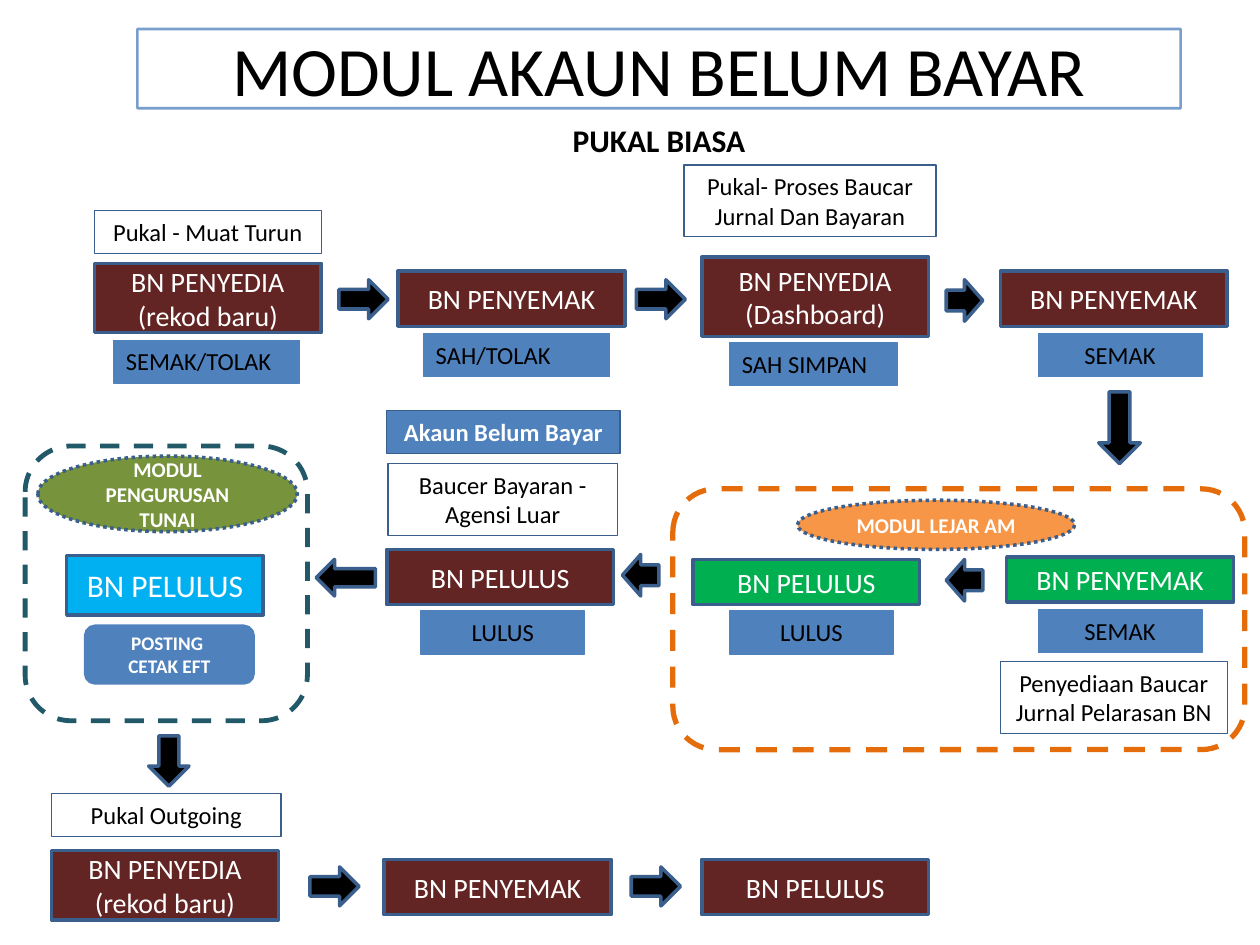
from dataclasses import dataclass
from typing import Optional

from lxml.etree import SubElement
from pptx import Presentation
from pptx.dml.color import RGBColor
from pptx.enum.dml import MSO_LINE as Dash
from pptx.enum.shapes import MSO_SHAPE as Shape
from pptx.enum.text import MSO_ANCHOR as Anchor, MSO_AUTO_SIZE as AutoSize, PP_ALIGN as Align
from pptx.oxml.ns import qn
from pptx.util import Inches, Pt

FONT = "Calibri"
COLORS = {
    "black": "000000",
    "white": "FFFFFF",
    "outline": "3A5F8C",
    "blue": "4F81BD",
    "maroon": "632523",
    "green": "00B050",
    "cyan": "00B0F0",
    "olive": "77933C",
    "orange": "F79646",
    "ledger": "E46C0A",
    "cash": "215968",
}


@dataclass(frozen=True)
class Style:
    fill: Optional[str] = None
    line: str = "outline"
    weight: float = 2
    dash: Optional[Dash] = None
    shape: Shape = Shape.RECTANGLE
    size: float = 16
    color: str = "white"
    bold: bool = False
    align: Align = Align.CENTER
    anchor: Anchor = Anchor.MIDDLE


@dataclass(frozen=True)
class Box:
    style: Style
    left: float
    top: float
    width: float
    height: float
    text: str = ""


@dataclass(frozen=True)
class Arrow:
    left: float
    top: float
    width: float
    height: float
    rotation: int = 0


ROLE = Style("maroon")
LEDGER_ROLE = Style("green")
CASH_ROLE = Style("cyan", size=18)
SCREEN = Style(weight=0.75, size=14, color="black", anchor=Anchor.TOP)
ACTION = Style("blue", "blue", 0.75, size=14, color="black", anchor=Anchor.TOP)
LEFT_ACTION = Style("blue", "blue", 0.75, size=14, color="black",
                    align=Align.LEFT, anchor=Anchor.TOP)
HEADING = Style("blue", weight=0.75, size=14, bold=True, anchor=Anchor.TOP)
POSTING = Style("blue", "blue", shape=Shape.ROUNDED_RECTANGLE, size=11, bold=True)
LEDGER_MODULE = Style("orange", dash=Dash.ROUND_DOT, shape=Shape.OVAL, size=12, bold=True)
CASH_MODULE = Style("olive", dash=Dash.ROUND_DOT, shape=Shape.OVAL, size=12, bold=True)
LEDGER_FRAME = Style(line="ledger", weight=3, dash=Dash.DASH, shape=Shape.ROUNDED_RECTANGLE)
CASH_FRAME = Style(line="cash", weight=2.75, dash=Dash.DASH, shape=Shape.ROUNDED_RECTANGLE)
ARROW = Style("black", shape=Shape.RIGHT_ARROW)

ROLE_W, ROLE_H, TALL_H, LEDGER_H = 1.8, 0.44, 0.55, 0.36
ACTION_W, ONE_LINE, TWO_LINES = 1.3, 0.34, 0.57

BOXES = [
    Box(ROLE, 0.75, 2.09, ROLE_W, TALL_H, "BN PENYEDIA\n(rekod baru)"),
    Box(ROLE, 3.16, 2.15, ROLE_W, ROLE_H, "BN PENYEMAK"),
    Box(ROLE, 5.57, 2.04, ROLE_W, 0.63, "BN PENYEDIA\n(Dashboard)"),
    Box(ROLE, 7.94, 2.15, ROLE_W, ROLE_H, "BN PENYEMAK"),
    Box(ROLE, 3.07, 4.36, ROLE_W, ROLE_H, "BN PELULUS"),
    Box(ROLE, 0.41, 6.75, ROLE_W, TALL_H, "BN PENYEDIA\n(rekod baru)"),
    Box(ROLE, 3.05, 6.82, ROLE_W, ROLE_H, "BN PENYEMAK"),
    Box(ROLE, 5.57, 6.82, ROLE_W, ROLE_H, "BN PELULUS"),
    Box(SCREEN, 0.75, 1.67, ROLE_W, ONE_LINE, "Pukal - Muat Turun"),
    Box(SCREEN, 5.43, 1.31, 2, TWO_LINES, "Pukal- Proses Baucar Jurnal Dan Bayaran"),
    Box(SCREEN, 7.94, 5.25, ROLE_W, TWO_LINES, "Penyediaan Baucar Jurnal Pelarasan BN"),
    Box(SCREEN, 3.08, 3.68, 1.82, TWO_LINES, "Baucer Bayaran - Agensi Luar"),
    Box(SCREEN, 0.41, 6.3, 1.82, ONE_LINE, "Pukal Outgoing"),
    Box(LEDGER_MODULE, 6.33, 3.97, 2.2, 0.39, "MODUL LEJAR AM"),
    Box(CASH_MODULE, 0.3, 3.62, 2.06, 0.6, "MODUL PENGURUSAN TUNAI"),
    Box(CASH_ROLE, 0.53, 4.41, 1.56, 0.47, "BN PELULUS"),
    Box(POSTING, 0.68, 4.97, 1.33, 0.45, "POSTING \nCETAK EFT"),
    Box(LEFT_ACTION, 0.9, 2.7, 1.48, ONE_LINE, "SEMAK/TOLAK"),
    Box(LEFT_ACTION, 3.36, 2.65, 1.48, ONE_LINE, "SAH/TOLAK"),
    Box(LEFT_ACTION, 5.79, 2.72, 1.33, ONE_LINE, "SAH SIMPAN"),
    Box(ACTION, 8.24, 2.65, ACTION_W, ONE_LINE, "SEMAK"),
    Box(LEDGER_ROLE, 7.99, 4.42, ROLE_W, LEDGER_H, "BN PENYEMAK"),
    Box(ACTION, 8.24, 4.84, ACTION_W, ONE_LINE, "SEMAK"),
    Box(LEDGER_ROLE, 5.5, 4.44, ROLE_W, LEDGER_H, "BN PELULUS"),
    Box(ACTION, 5.79, 4.85, ACTION_W, ONE_LINE, "LULUS"),
    Box(ACTION, 3.34, 4.85, ACTION_W, ONE_LINE, "LULUS"),
    Box(LEDGER_FRAME, 5.34, 3.88, 4.54, 2.07),
    Box(CASH_FRAME, 0.2, 3.54, 2.24, 2.18),
    Box(HEADING, 3.07, 3.26, 1.85, ONE_LINE, "Akaun Belum Bayar"),
]

ARROWS = [
    Arrow(2.69, 2.22, 0.39, 0.31),
    Arrow(5.05, 2.22, 0.39, 0.31),
    Arrow(7.51, 2.22, 0.29, 0.33),
    Arrow(8.6, 3.23, 0.57, 0.33, 90),
    Arrow(7.51, 4.44, 0.29, 0.33, 180),
    Arrow(4.94, 4.4, 0.29, 0.33, 180),
    Arrow(2.51, 4.44, 0.47, 0.29, 180),
    Arrow(1.14, 5.88, 0.4, 0.32, 90),
    Arrow(2.46, 6.88, 0.39, 0.31),
    Arrow(5.01, 6.88, 0.39, 0.31),
]


def rgb(name: str) -> RGBColor:
    return RGBColor.from_string(COLORS[name])


def write(frame, text: str, *, size: float, color: str = "black", bold: bool = False,
          align: Align = Align.CENTER, anchor: Anchor = Anchor.TOP) -> None:
    frame.word_wrap = True
    frame.auto_size = AutoSize.NONE
    frame.vertical_anchor = anchor
    frame.text = text
    for paragraph in frame.paragraphs:
        paragraph.alignment = align
        font = paragraph.runs[0].font
        font.name, font.size, font.bold = FONT, Pt(size), bold
        font.color.rgb = rgb(color)


def draw_box(slide, box: Box):
    style = box.style
    drawn = slide.shapes.add_shape(style.shape, Inches(box.left), Inches(box.top),
                                   Inches(box.width), Inches(box.height))
    drawn.shadow.inherit = False
    if style.fill:
        drawn.fill.solid()
        drawn.fill.fore_color.rgb = rgb(style.fill)
    else:
        drawn.fill.background()
    drawn.line.color.rgb = rgb(style.line)
    drawn.line.width = Pt(style.weight)
    if style.dash:
        drawn.line.dash_style = style.dash
    if box.text:
        write(drawn.text_frame, box.text, size=style.size, color=style.color,
              bold=style.bold, align=style.align, anchor=style.anchor)
    return drawn


def draw_arrow(slide, arrow: Arrow) -> None:
    drawn = draw_box(slide, Box(ARROW, arrow.left, arrow.top, arrow.width, arrow.height))
    drawn.rotation = arrow.rotation


def draw_title(slide) -> None:
    title = slide.shapes.title
    title.left, title.top = Inches(1.09), Inches(0.23)
    title.width, title.height = Inches(8.28), Inches(0.63)
    title.line.color.rgb = rgb("blue")
    title.line.width = Pt(1.5)
    line_color = title.line.fill.fore_color
    line_color.rgb = rgb("blue")
    for color in title.element.spPr.iter(qn("a:srgbClr")):
        SubElement(color, qn("a:alpha"), val="76000")
    write(title.text_frame, "MODUL AKAUN BELUM BAYAR", size=39.6, anchor=Anchor.MIDDLE)


def main() -> None:
    deck = Presentation()
    deck.slide_width, deck.slide_height = Inches(10), Inches(7.5)
    slide = deck.slides.add_slide(deck.slide_layouts[5])
    draw_title(slide)
    subtitle = slide.shapes.add_textbox(Inches(1.09), Inches(0.91), Inches(8.28), Inches(0.4))
    write(subtitle.text_frame, "PUKAL BIASA", size=18, bold=True)
    for box in BOXES:
        draw_box(slide, box)
    for arrow in ARROWS:
        draw_arrow(slide, arrow)
    deck.save("out.pptx")


if __name__ == "__main__":
    main()
